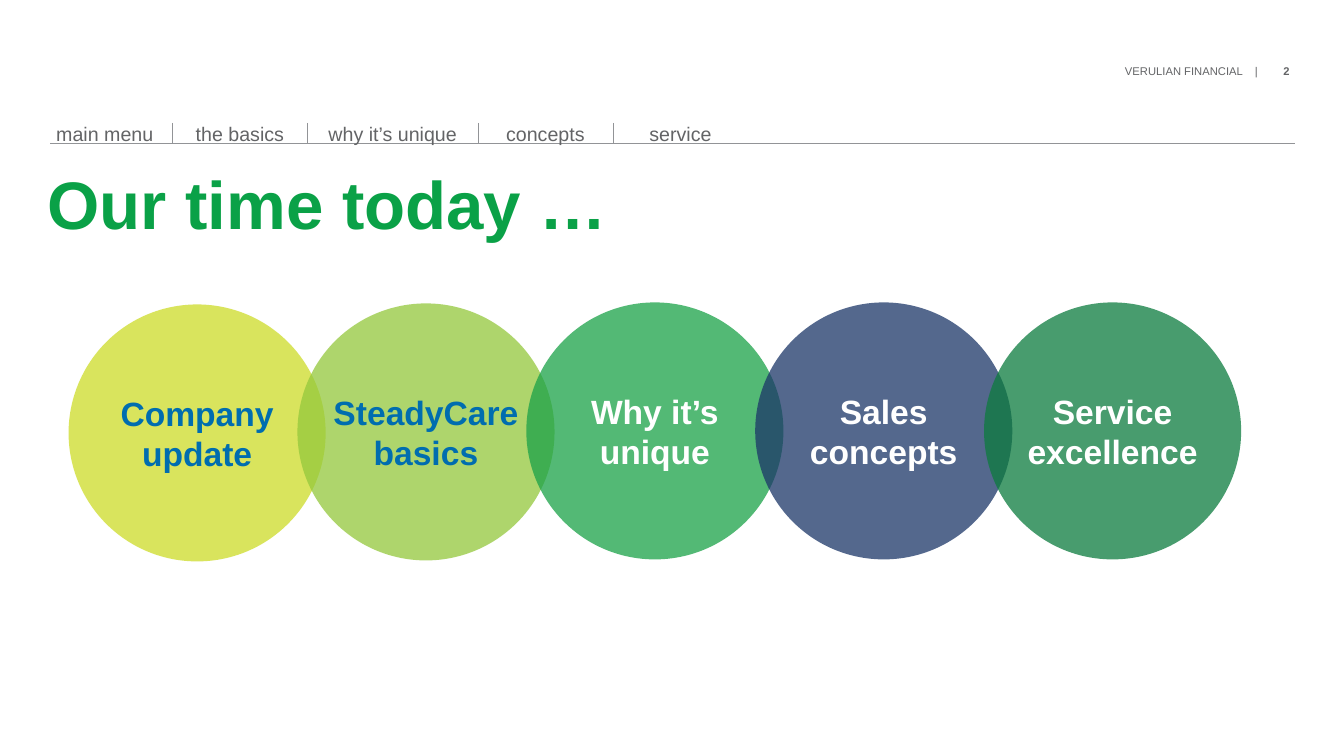
from lxml import etree
from pptx import Presentation
from pptx import util as u
from pptx.dml.color import RGBColor
from pptx.enum import shapes, text
from pptx.oxml.ns import qn

HUES = {"gray": "636466", "rule": "929497", "title": "0AA147", "blue": "006DAF",
        "white": "FFFFFF", "lime": "CDDC28", "leaf": "94C83C", "green": "1AA248",
        "navy": "1B3668", "pine": "0C7B3E"}
FONT = "Arial"
LEFT, RIGHT = 0.5, 12.84
RULE_Y = 1.42


def style(box, size, hue, align, bold=False):
    """Format every paragraph and run of a shape."""
    for par in box.text_frame.paragraphs:
        par.alignment = align
        for run in par.runs:
            run.font.name, run.font.size, run.font.bold = FONT, u.Pt(size), bold
            run.font.color.rgb = RGBColor.from_string(HUES[hue])


def rule(x1, y1, x2, y2):
    line = slide.shapes.add_connector(shapes.MSO_CONNECTOR.STRAIGHT,
                                      *map(u.Inches, (x1, y1, x2, y2)))
    line.line.color.rgb = RGBColor.from_string(HUES["rule"])
    line.line.width = u.Pt(0.5)
    etree.SubElement(line._element.spPr, qn("a:effectLst"))


deck = Presentation()
deck.slide_width, deck.slide_height = u.Inches(13.33), u.Inches(7.5)
slide = deck.slides.add_slide(deck.slide_layouts[5])

# Page header
head = slide.shapes.add_textbox(*map(u.Inches, (10.53, 0.64, 2.26, 0.15)))
frame = head.text_frame
frame.margin_left = frame.margin_right = frame.margin_top = frame.margin_bottom = 0
frame.word_wrap = True
par = frame.paragraphs[0]
tabs = etree.SubElement(par._p.get_or_add_pPr(), qn("a:tabLst"))
etree.SubElement(tabs, qn("a:tab"), pos=str(u.Inches(1.57)), algn="l")
par.add_run().text = "VERULIAN FINANCIAL    |\t"
page = par.add_run()
page.text = "2"
style(head, 8, "gray", text.PP_ALIGN.RIGHT)
page.font.bold = True

# Menu: equal gaps, with a divider in the middle of each
rule(LEFT, RULE_Y, RIGHT, RULE_Y)
gap = 0.14
x = 0.44
for i, (name, width) in enumerate([("main menu", 1.2), ("the basics", 1.2),
                                   ("why it’s unique", 1.55), ("concepts", 1.2),
                                   ("service", 1.2)]):
    item = slide.shapes.add_textbox(*map(u.Inches, (x, 1.16, width, 0.34)))
    item.text_frame.text = name
    item.text_frame.word_wrap = False
    style(item, 14, "gray", text.PP_ALIGN.CENTER)
    if i:
        rule(x - gap / 2, 1.22, x - gap / 2, RULE_Y)
    x += width + gap

# Title
title = slide.shapes.title
title.left, title.top, title.width, title.height = map(u.Inches, (0.47, 1.61, 9.56, 1.2))
frame = title.text_frame
frame.text = "Our time today …"
frame.margin_left = frame.margin_right = frame.margin_top = frame.margin_bottom = 0
frame.vertical_anchor = text.MSO_ANCHOR.TOP
style(title, 48, "title", text.PP_ALIGN.LEFT, True)

# Agenda: a chain of overlapping circles
size, pitch = 2.55, 2.27
wide, high = 2.33, 1.06
steps = [("Company update", "lime", "blue"), ("SteadyCare basics", "leaf", "blue"),
         ("Why it’s unique", "green", "white"), ("Sales concepts", "navy", "white"),
         ("Service excellence", "pine", "white")]
for i, (name, hue, ink) in enumerate(steps):
    x, y = 0.68 + i * pitch, max(3.02 - i * 0.01, 3)
    group = slide.shapes.add_group_shape()
    disc = group.shapes.add_shape(shapes.MSO_SHAPE.OVAL,
                                  *map(u.Inches, (x, y, size, size)))
    disc.shadow.inherit = False
    disc.line.fill.background()
    disc.fill.solid()
    disc.fill.fore_color.rgb = RGBColor.from_string(HUES[hue])
    tint = disc._element.spPr.find(qn("a:solidFill"))[0]
    etree.SubElement(tint, qn("a:alpha"), val="75000")

    label = group.shapes.add_textbox(*map(u.Inches, (x + (size - wide) / 2,
                                                     y + (size - high) / 2, wide, high)))
    label.text_frame.text = name
    label.text_frame.word_wrap = True
    label.text_frame.vertical_anchor = text.MSO_ANCHOR.MIDDLE
    style(label, 24, ink, text.PP_ALIGN.CENTER, True)

deck.save("out.pptx")
